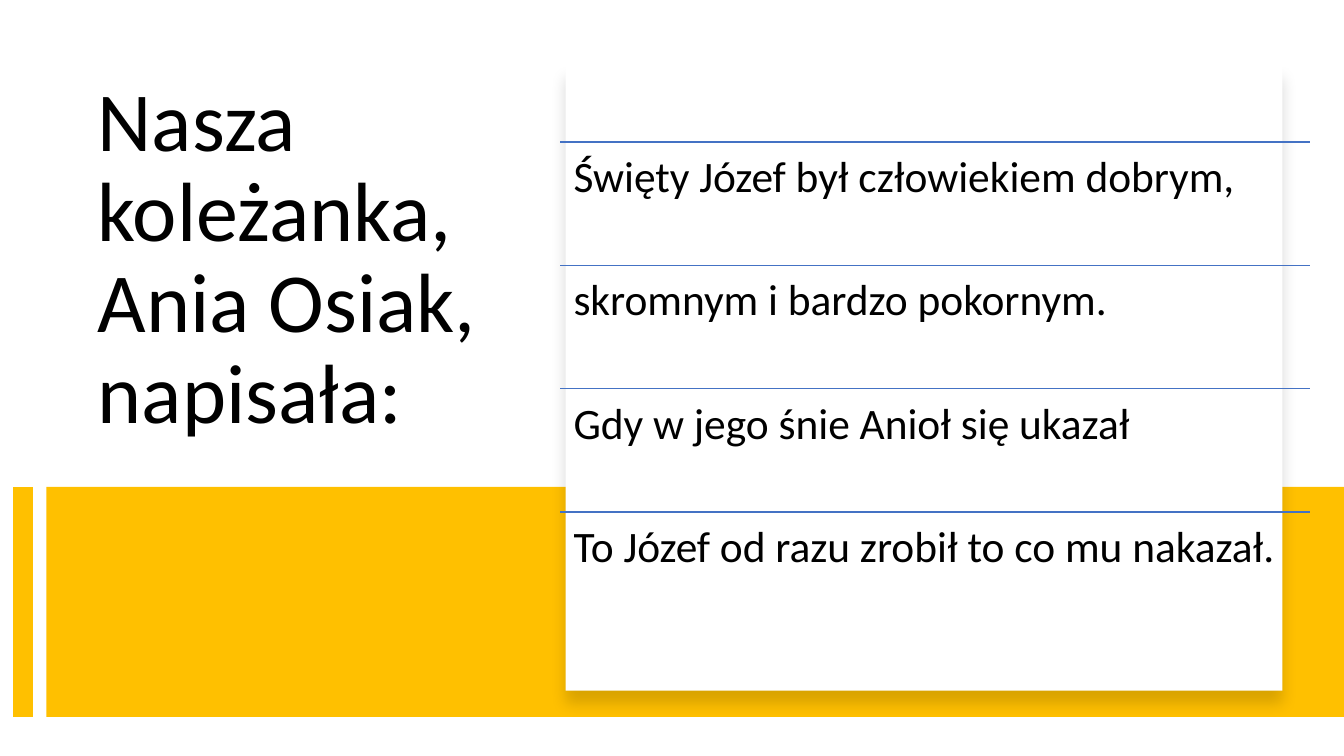
from lxml.etree import SubElement
from pptx import Presentation
from pptx.dml.color import RGBColor
from pptx.enum.shapes import MSO_CONNECTOR as CONN, MSO_SHAPE as SHAPE
from pptx.enum.text import MSO_ANCHOR as ANCHOR, MSO_AUTO_SIZE as AUTO, PP_ALIGN as ALIGN
from pptx.oxml.ns import qn
from pptx.util import Pt

TITLE = "Nasza koleżanka, Ania Osiak, napisała:"
VERSES = [
    "Święty Józef był człowiekiem dobrym,",
    "skromnym i bardzo pokornym.",
    "Gdy w jego śnie Anioł się ukazał",
    "To Józef od razu zrobił to co mu nakazał.",
]
GOLD, WHITE, BLUE, BLACK = "FFC000", "FFFFFF", "4472C4", "000000"

# left, top, width, height in points
SLIDE_W, SLIDE_H = 960, 540
TITLE_BOX = (62.6, 52.6, 298.8, 211.7)
BAND_BOX = (33.2, 347.8, 926.8, 164.2)
CARD_BOX = (404, 46.1, 512, 447.2)
STRIPE_X = 16.6
VERSE_X, VERSE_Y, VERSE_W, VERSE_H = 400.3, 101.4, 535.7, 88.1


def color(value):
    return RGBColor.from_string(value)


def points(values):
    return [Pt(v) for v in values]


def add_rect(box, fill):
    sp = slide.shapes.add_shape(SHAPE.RECTANGLE, *points(box))
    sp.shadow.inherit = False
    sp.fill.solid()
    sp.fill.fore_color.rgb = color(fill)
    sp.line.fill.background()
    return sp


def add_line(x1, y1, x2, y2, stroke, width):
    line = slide.shapes.add_connector(CONN.STRAIGHT, *points((x1, y1, x2, y2)))
    line.line.color.rgb = color(stroke)
    line.line.width = Pt(width)
    SubElement(line._element.spPr, qn("a:effectLst"))


def add_shadow(sp, hue, opacity, blur, distance, angle):
    effects = sp._element.spPr.find(qn("a:effectLst"))
    shadow = SubElement(effects, qn("a:outerShdw"), blurRad=str(Pt(blur)),
                        dist=str(Pt(distance)), dir=str(angle * 60000),
                        algn="t", rotWithShape="0")
    clr = SubElement(shadow, qn("a:srgbClr"), val=hue)
    SubElement(clr, qn("a:alpha"), val=str(opacity * 1000))


def write(sp, text, size, **frame):
    tf = sp.text_frame
    frame = {"word_wrap": True, "auto_size": AUTO.NONE,
             "vertical_anchor": ANCHOR.TOP, **frame}
    for name, value in frame.items():
        setattr(tf, name, value)
    p = tf.paragraphs[0]
    p.alignment = ALIGN.LEFT
    p.line_spacing = 0.9
    r = p.add_run()
    r.text = text
    for name, value in {"name": "Calibri", "size": Pt(size)}.items():
        setattr(r.font, name, value)
    r.font.color.rgb = color(BLACK)


prs = Presentation()
prs.slide_width, prs.slide_height = points((SLIDE_W, SLIDE_H))
slide = prs.slides.add_slide(prs.slide_layouts[5])

title = slide.shapes.title
title.left, title.top, title.width, title.height = points(TITLE_BOX)
write(title, TITLE, 60)

add_rect(BAND_BOX, GOLD)
band_top, band_height = BAND_BOX[1], BAND_BOX[3]
add_line(STRIPE_X, band_top, STRIPE_X, band_top + band_height, GOLD, 14)
add_shadow(add_rect(CARD_BOX, WHITE), BLACK, 15, 11, 10, 90)

insets = {f"margin_{side}": Pt(9.4) for side in ("left", "top", "right", "bottom")}
for i, verse in enumerate(VERSES):
    y = VERSE_Y + i * VERSE_H
    add_line(VERSE_X, y, VERSE_X + VERSE_W, y, BLUE, 1)
    box = slide.shapes.add_textbox(*points((VERSE_X, y, VERSE_W, VERSE_H)))
    write(box, verse, 31, **insets)

prs.save("out.pptx")
